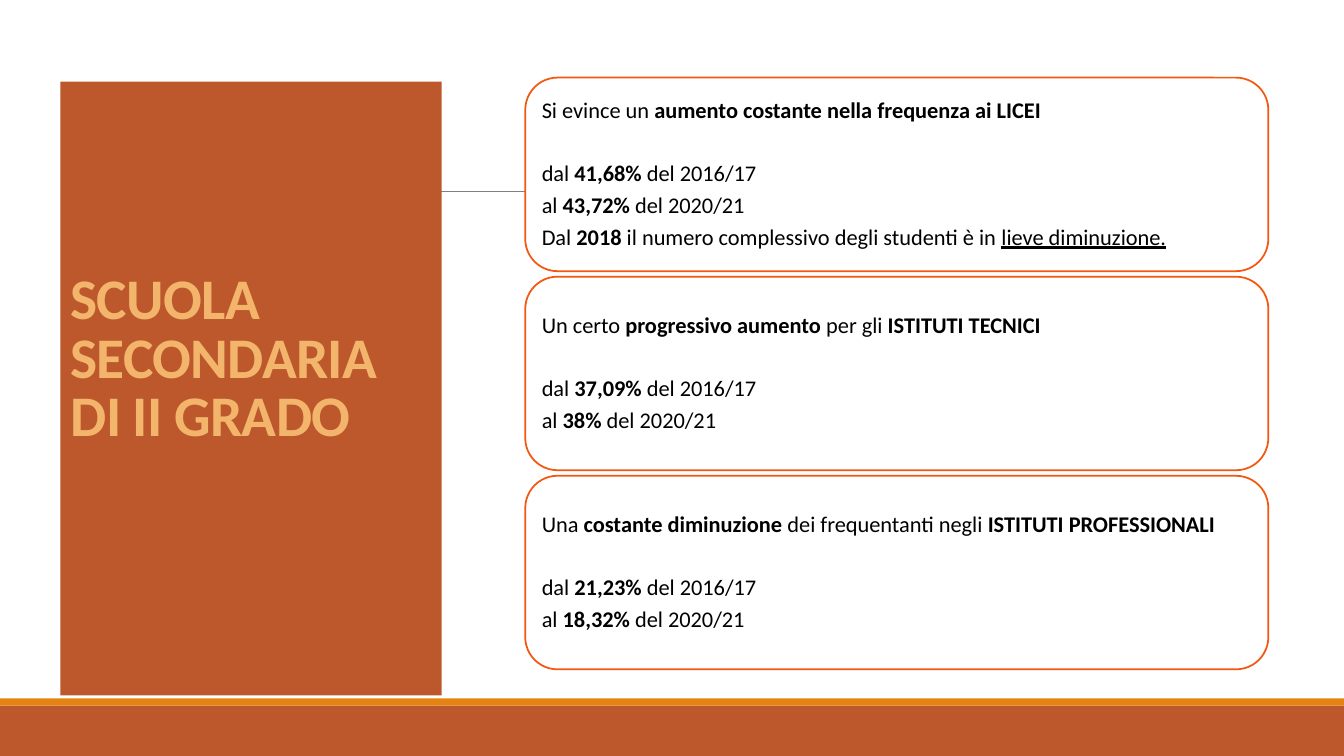
"""Build the slide on upper secondary school enrolment."""
from pptx import Presentation
from pptx.dml.color import RGBColor
from pptx.enum import shapes as kinds, text as txt
from pptx.oxml.ns import qn
from pptx.util import Inches, Pt

TITLE = "SCUOLA\vSECONDARIA DI II GRADO"


def span(start, end):
    return [
        [("", "dal "), ("b", start), ("", " del 2016/17")],
        [("", "al "), ("b", end), ("", " del 2020/21")],
    ]


CARDS = [
    [[("", "Si evince un "), ("b", "aumento costante nella frequenza ai LICEI")],
     *span("41,68%", "43,72%"),
     [("", "Dal "), ("b", "2018"),
      ("", " il numero complessivo degli studenti è in "),
      ("u", "lieve diminuzione.")]],
    [[("", "Un certo "), ("b", "progressivo aumento"), ("", " per gli "),
      ("b", "ISTITUTI TECNICI")],
     *span("37,09%", "38%")],
    [[("", "Una "), ("b", "costante diminuzione"),
      ("", " dei frequentanti negli "), ("b", "ISTITUTI PROFESSIONALI")],
     *span("21,23%", "18,32%")],
]


class Theme:
    font = "Calibri"
    rust = RGBColor.from_string("BD582C")
    amber = RGBColor.from_string("E48312")
    sand = RGBColor.from_string("F3B56C")
    edge = RGBColor.from_string("F45710")
    grey = RGBColor.from_string("808080")
    white = RGBColor.from_string("FFFFFF")
    black = RGBColor.from_string("000000")
    head = Pt(41)
    body = Pt(16)
    gap = Pt(5.35)
    break_gap = Pt(28.2)


def paint(shape, color):
    shape.fill.solid()
    shape.fill.fore_color.rgb = color


def add_band(slide, top, height, color):
    band = slide.shapes.add_shape(
        kinds.MSO_SHAPE.RECTANGLE, 0, Inches(top), Inches(13.33), Inches(height))
    band.shadow.inherit = False
    paint(band, color)
    band.line.fill.background()


def add_rule(slide):
    rule = slide.shapes.add_connector(
        kinds.MSO_CONNECTOR.STRAIGHT,
        Inches(1.31), Inches(1.9), Inches(12.21), Inches(1.9))
    rule.line.color.rgb = Theme.grey
    rule.line.width = Pt(0.5)
    props = rule.element.spPr
    props.append(props.makeelement(qn("a:effectLst"), {}))


def set_title(slide):
    title = slide.shapes.title
    title.left, title.top = Inches(0.6), Inches(0.81)
    title.width, title.height = Inches(3.78), Inches(6.09)
    paint(title, Theme.rust)
    frame = title.text_frame
    frame.text = TITLE
    frame.word_wrap = True
    frame.auto_size = txt.MSO_AUTO_SIZE.NONE
    frame.vertical_anchor = txt.MSO_ANCHOR.BOTTOM
    frame.margin_bottom = Inches(2.45)
    para = frame.paragraphs[0]
    para.alignment = txt.PP_ALIGN.LEFT
    para.line_spacing = 0.85
    font = para.font
    font.name, font.size, font.bold = Theme.font, Theme.head, True
    font.color.rgb = Theme.sand
    for run in para.runs:
        run.font.bold = True
        run.font.element.set("spc", "-50") if hasattr(run.font, "element") \
            else run._r.get_or_add_rPr().set("spc", "-50")
    title.element.getparent().append(title.element)


def add_card(slide, top, lines):
    card = slide.shapes.add_shape(
        kinds.MSO_SHAPE.ROUNDED_RECTANGLE,
        Inches(5.21), Inches(top), Inches(7.37), Inches(1.92))
    card.shadow.inherit = False
    paint(card, Theme.white)
    card.line.color.rgb = Theme.edge
    card.line.width = Pt(1.25)
    frame = card.text_frame
    frame.word_wrap = True
    frame.vertical_anchor = txt.MSO_ANCHOR.MIDDLE
    frame.margin_left = frame.margin_right = Inches(0.07)
    frame.margin_top = frame.margin_bottom = Inches(0.07)
    for i, line in enumerate(lines):
        para = frame.add_paragraph() if i else frame.paragraphs[0]
        para.alignment = txt.PP_ALIGN.LEFT
        para.line_spacing = 0.9
        para.space_after = Theme.gap if i else Theme.break_gap
        para.font.name, para.font.size = Theme.font, Theme.body
        para.font.color.rgb = Theme.black
        for style, words in line:
            run = para.add_run()
            run.text = words
            if style == "b":
                run.font.bold = True
            elif style == "u":
                run.font.underline = True


def main():
    deck = Presentation()
    deck.slide_width, deck.slide_height = Inches(13.33), Inches(7.5)
    slide = deck.slides.add_slide(deck.slide_layouts[5])
    add_band(slide, 7, 0.5, Theme.rust)
    add_band(slide, 6.93, 0.07, Theme.amber)
    add_rule(slide)
    set_title(slide)
    for i, lines in enumerate(CARDS):
        add_card(slide, 0.77 + 1.975 * i, lines)
    deck.save("out.pptx")


if __name__ == "__main__":
    main()
